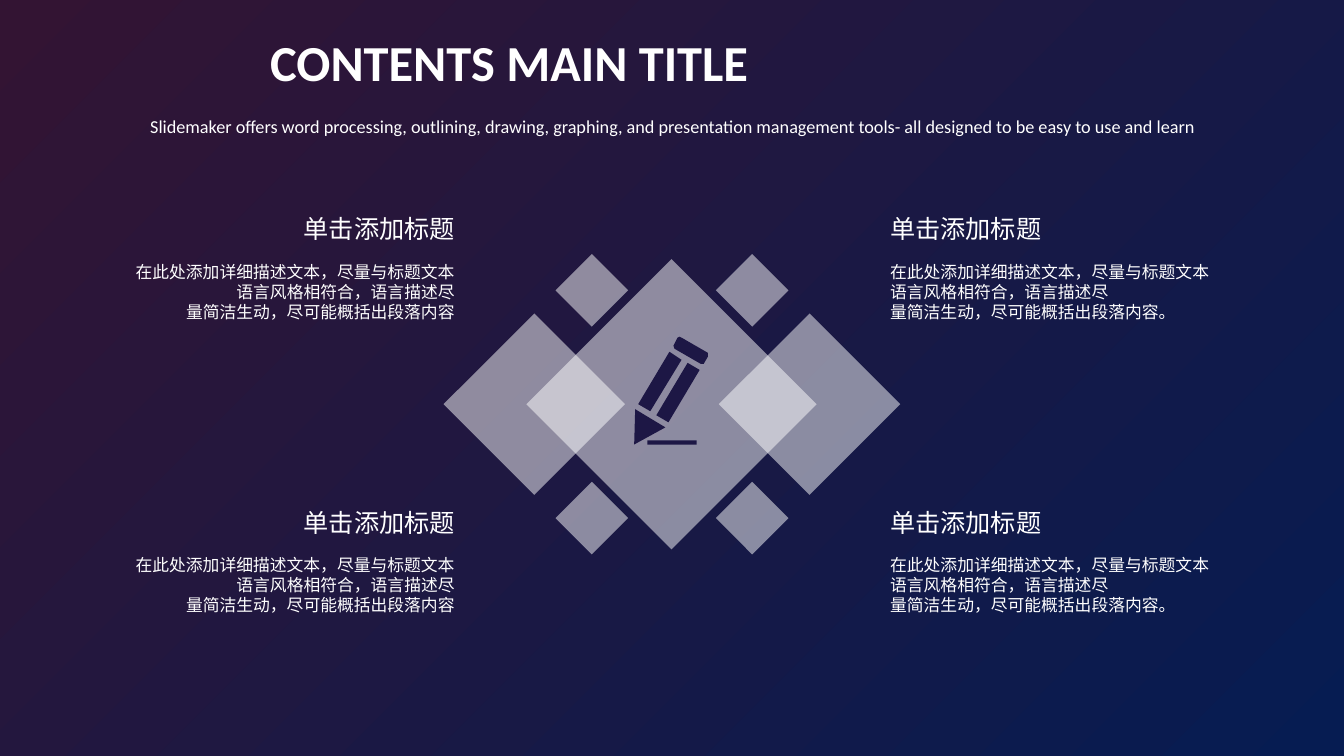
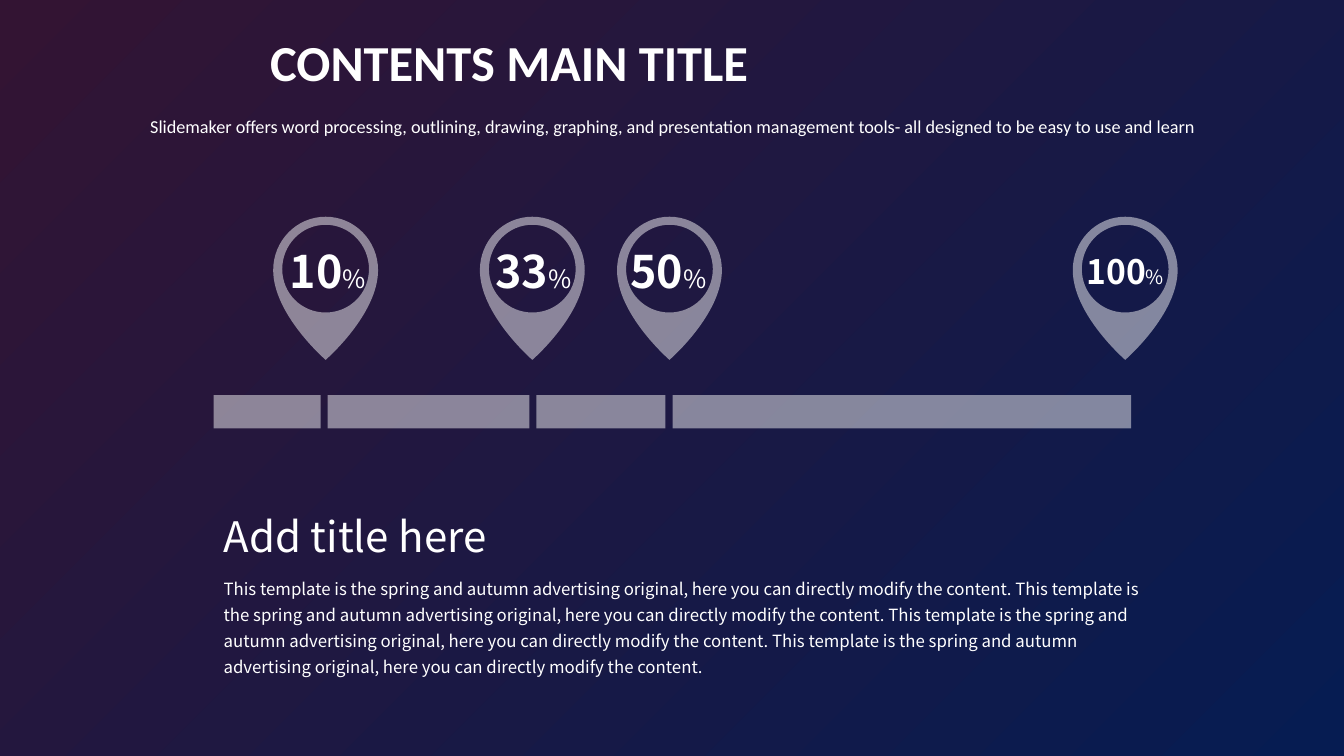
"""Build two contents slides: a diamond cluster and a percentage timeline."""
from dataclasses import dataclass

from lxml import etree
from pptx import Presentation
from pptx.dml.color import RGBColor
from pptx.enum.shapes import MSO_SHAPE
from pptx.enum.text import MSO_ANCHOR, MSO_AUTO_SIZE, PP_ALIGN
from pptx.oxml.ns import qn
from pptx.presentation import Presentation as Deck
from pptx.shapes.autoshape import Shape
from pptx.slide import Slide
from pptx.text.text import TextFrame
from pptx.util import Inches, Pt

DIAMOND, RECTANGLE = MSO_SHAPE.DIAMOND, MSO_SHAPE.RECTANGLE
LEFT, RIGHT, CENTER, JUSTIFY = PP_ALIGN.LEFT, PP_ALIGN.RIGHT, PP_ALIGN.CENTER, PP_ALIGN.JUSTIFY
TOP, FIXED = MSO_ANCHOR.TOP, MSO_AUTO_SIZE.NONE

COLORS = {
    "plum": "331433",
    "navy": "061C52",
    "ink": "1D1745",
    "white": "FFFFFF",
    "soft": "FEFEFE",
}
LATIN, CJK = "Calibri", "Noto Sans CJK SC"
TITLE = "CONTENTS MAIN TITLE"
SUBTITLE = (
    "Slidemaker offers word processing, outlining, drawing, graphing, and "
    "presentation management tools- all designed to be easy to use and learn"
)
HEADING = "单击添加标题"
DETAILS = ("在此处添加详细描述文本，尽量与标题文本", "语言风格相符合，语言描述尽", "量简洁生动，尽可能概括出段落内容")
SENTENCE = (
    "This template is the spring and autumn advertising original, "
    "here you can directly modify the content."
)

Point = tuple[float, float]


@dataclass(frozen=True)
class Area:
    left: float
    top: float
    width: float
    height: float

    def lengths(self) -> list[int]:
        return [Inches(value) for value in (self.left, self.top, self.width, self.height)]


@dataclass(frozen=True)
class Span:
    text: str
    size: float
    bold: bool = False
    font: str = CJK
    color: str = "white"


@dataclass(frozen=True)
class Para:
    spans: tuple[Span, ...]
    align: PP_ALIGN = LEFT
    before: float = 0
    spacing: float = 1.0


@dataclass(frozen=True)
class Diamond:
    center_x: float
    center_y: float
    size: float


@dataclass(frozen=True)
class Pin:
    center: float
    number: str
    text_area: Area
    number_size: float = 32
    percent_size: float = 18


DIAMONDS = (
    Diamond(8.03, 4.01, 1.8),
    Diamond(5.3, 4.01, 1.8),
    *(Diamond(x, y, 0.72) for x in (5.87, 7.46) for y in (2.88, 5.14)),
    Diamond(6.66, 4.01, 2.88),
)
PENCIL: list[list[Point]] = [
    [(6.42, 4.37), (6.91, 4.37), (6.91, 4.41), (6.42, 4.41)],
    [(6.3, 4.06), (6.6, 4.24), (6.29, 4.41)],
    [(6.82, 3.6), (6.94, 3.67), (6.63, 4.19), (6.51, 4.12)],
    [(6.64, 3.49), (6.76, 3.57), (6.45, 4.08), (6.33, 4.01)],
    [(6.74, 3.34), (6.76, 3.35), (7.02, 3.5), (7.02, 3.54), (6.98, 3.61),
     (6.95, 3.61), (6.69, 3.46), (6.68, 3.43), (6.72, 3.35)],
]
PIN_HALF: list[Point] = [
    (0, 2.15), (0.29, 2.15), (0.52, 2.39), (0.52, 2.68), (0.52, 3.12), (0, 3.57), (0, 3.57),
]
HOLE_HALF: list[Point] = [
    (0, 2.23), (0.24, 2.23), (0.43, 2.43), (0.43, 2.67), (0.43, 2.91), (0.24, 3.1), (0, 3.1),
]
PINS = (
    Pin(3.23, "10", Area(2.76, 2.37, 0.98, 0.64)),
    Pin(5.28, "33", Area(4.8, 2.37, 0.98, 0.64)),
    Pin(6.64, "50", Area(6.14, 2.37, 0.98, 0.64)),
    Pin(11.16, "100", Area(10.65, 2.44, 1.02, 0.5), 24, 14),
)
BAR_WIDTHS = (1.06, 2.0, 1.28, 4.55)
BAR_LEFT, BAR_GAP = 2.12, 0.07


def finish_shape(shape: Shape, color: str, opacity: int = 100) -> None:
    shape.shadow.inherit = False
    shape.line.fill.background()
    shape.fill.solid()
    shape.fill.fore_color.rgb = RGBColor.from_string(COLORS[color])
    if opacity < 100:
        tint = shape.element.spPr.find(f"{qn('a:solidFill')}/{qn('a:srgbClr')}")
        etree.SubElement(tint, qn("a:alpha"), val=str(opacity * 1000))


def write_text(frame: TextFrame, paras: list[Para], wrap: bool = True) -> None:
    frame_format = {"word_wrap": wrap, "auto_size": FIXED, "vertical_anchor": TOP}
    for name, value in frame_format.items():
        setattr(frame, name, value)
    for index, para in enumerate(paras):
        paragraph = frame.add_paragraph() if index else frame.paragraphs[0]
        para_format = {
            "alignment": para.align,
            "space_before": Pt(para.before),
            "line_spacing": para.spacing,
        }
        for name, value in para_format.items():
            setattr(paragraph, name, value)
        for span in para.spans:
            run = paragraph.add_run()
            run.text = span.text
            font_format = {"size": Pt(span.size), "bold": span.bold, "name": span.font}
            for name, value in font_format.items():
                setattr(run.font, name, value)
            run.font.color.rgb = RGBColor.from_string(COLORS[span.color])
            etree.SubElement(run.font._element, qn("a:ea"), typeface=span.font)


def add_text(page: Slide, area: Area, paras: list[Para], wrap: bool = True) -> None:
    write_text(page.shapes.add_textbox(*area.lengths()).text_frame, paras, wrap)


def fill_placeholder(shape: Shape, area: Area, para: Para) -> None:
    shape.left, shape.top, shape.width, shape.height = area.lengths()
    write_text(shape.text_frame, [para])


def add_page(deck: Deck) -> Slide:
    page = deck.slides.add_slide(deck.slide_layouts[1])
    title = Para((Span(TITLE, 36, True, LATIN),), JUSTIFY)
    fill_placeholder(page.shapes.title, Area(2.58, 0.26, 8.17, 0.71), title)
    body = page.placeholders[1]
    subtitle = Para((Span(SUBTITLE, 13, font=LATIN),), CENTER)
    fill_placeholder(body, Area(0.68, 1.09, 11.97, 0.32), subtitle)
    properties = body.text_frame.paragraphs[0]._p.get_or_add_pPr()
    properties.set("marL", "0")
    properties.set("indent", "0")
    etree.SubElement(properties, qn("a:buNone"))
    return page


def add_outline(page: Slide, contours: list[list[Point]]) -> Shape:
    scaled = [[(Inches(x), Inches(y)) for x, y in contour] for contour in contours]
    builder = page.shapes.build_freeform(*scaled[0][0])
    for index, contour in enumerate(scaled):
        if index:
            builder.move_to(*contour[0])
        builder.add_line_segments(contour[1:], close=True)
    return builder.convert_to_shape()


def bend_outline(shape: Shape) -> None:
    lines = list(shape.element.iter(qn("a:lnTo")))
    for start in range(0, len(lines), 3):
        bend = etree.Element(qn("a:cubicBezTo"))
        lines[start].addprevious(bend)
        for line in lines[start:start + 3]:
            bend.append(line[0])
            line.getparent().remove(line)


def mirror_half(half: list[Point], center: float) -> list[Point]:
    right = [(center + x, y) for x, y in half]
    left = [(center - x, y) for x, y in reversed(half[:-1])]
    return right + left


def add_pin(page: Slide, pin: Pin) -> None:
    marker = add_outline(page, [mirror_half(half, pin.center) for half in (PIN_HALF, HOLE_HALF)])
    bend_outline(marker)
    finish_shape(marker, "white", 48)


def add_diamond_page(deck: Deck) -> None:
    page = add_page(deck)
    for diamond in DIAMONDS:
        half = diamond.size / 2
        area = Area(diamond.center_x - half, diamond.center_y - half, diamond.size, diamond.size)
        finish_shape(page.shapes.add_shape(DIAMOND, *area.lengths()), "white", 50)
    for left, align, ending in ((0.9, RIGHT, ""), (8.73, LEFT, "。")):
        lines = (*DETAILS[:-1], DETAILS[-1] + ending)
        paras = [Para((Span(HEADING, 18),), align)]
        for index, line in enumerate(lines):
            paras.append(Para((Span(line, 12, color="soft"),), align, 0 if index else 12.5))
        for top in (2.07, 4.98):
            add_text(page, Area(left, top, 3.71, 1.55), paras)
    finish_shape(add_outline(page, PENCIL), "ink")


def add_timeline_page(deck: Deck) -> None:
    page = add_page(deck)
    for pin in PINS:
        add_pin(page, pin)
    left = BAR_LEFT
    for width in BAR_WIDTHS:
        area = Area(left, 3.92, width, 0.33)
        finish_shape(page.shapes.add_shape(RECTANGLE, *area.lengths()), "white", 48)
        left += width + BAR_GAP
    for pin in PINS:
        spans = (Span(pin.number, pin.number_size, True), Span("%", pin.percent_size))
        add_text(page, pin.text_area, [Para(spans, CENTER)], wrap=False)
    description = Span(" ".join([SENTENCE] * 4), 12)
    add_text(page, Area(BAR_LEFT, 5.63, 9.33, 1.15), [Para((description,), spacing=1.3)])
    add_text(page, Area(BAR_LEFT, 5.02, 3.65, 0.61), [Para((Span("Add title here", 30),))])


def main() -> None:
    deck = Presentation()
    deck.slide_width, deck.slide_height = Inches(13.33), Inches(7.5)
    backdrop = deck.slide_master.background.fill
    backdrop.gradient()
    backdrop.gradient_angle = 315
    for stop, name in zip(backdrop.gradient_stops, ("plum", "navy")):
        stop.color.rgb = RGBColor.from_string(COLORS[name])
    add_diamond_page(deck)
    add_timeline_page(deck)
    deck.save("out.pptx")


if __name__ == "__main__":
    main()
